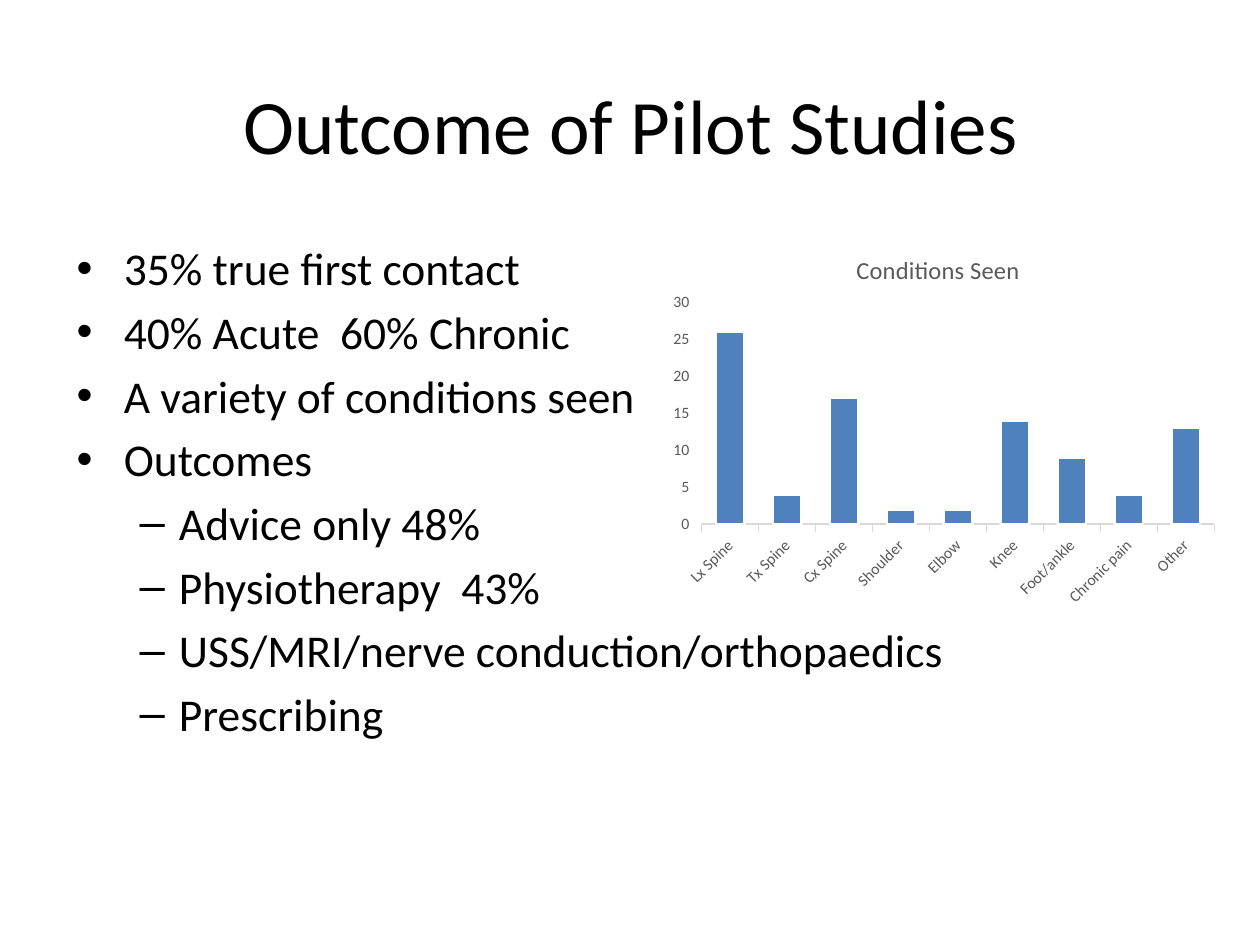
from lxml import etree
from pptx import Presentation
from pptx.chart.data import CategoryChartData
from pptx.dml.color import RGBColor
from pptx.enum.chart import XL_CHART_TYPE, XL_TICK_MARK
from pptx.enum.text import MSO_ANCHOR, MSO_AUTO_SIZE, PP_ALIGN
from pptx.oxml.ns import qn
from pptx.util import Emu, Pt

SCALE = 914400 / 126  # EMU in one px


def px(n):
    return Emu(round(n * SCALE))


def color(code):
    return RGBColor.from_string(code)


class Deck:
    face = "Calibri"
    ink, gray, rule, blue, white = "000000", "595959", "D9D9D9", "4F81BD", "FFFFFF"

    def __init__(self, wide, high):
        self.prs = Presentation()
        self.prs.slide_width, self.prs.slide_height = px(wide), px(high)
        # Title and content layout
        self.slide = self.prs.slides.add_slide(self.prs.slide_layouts[1])

    def style(self, font, size, code):
        font.name, font.size, font.bold = self.face, Pt(size), False
        font.color.rgb = color(code)

    def place(self, shape, box):
        shape.left, shape.top, shape.width, shape.height = map(px, box)
        shape.text_frame.word_wrap = True
        shape.text_frame.auto_size = MSO_AUTO_SIZE.NONE
        return shape.text_frame

    def title(self, text, box):
        frame = self.place(self.slide.shapes.title, box)
        frame.text = text
        frame.vertical_anchor = MSO_ANCHOR.MIDDLE
        frame.paragraphs[0].alignment = PP_ALIGN.CENTER
        self.style(frame.paragraphs[0].runs[0].font, 44, self.ink)

    def bullets(self, items, box):
        # Bullet signs and indents come from the template's levels
        frame = self.place(self.slide.placeholders[1], box)
        frame.text = "\n".join(text for level, text in items)
        for para, (level, text) in zip(frame.paragraphs, items):
            para.level = level
            self.style(para.runs[0].font, 26, self.ink)
        frame.paragraphs[0].space_before = Pt(0)

    def columns(self, name, values, box, plot):
        data = CategoryChartData()
        data.categories = list(values)
        data.add_series(name, list(values.values()))
        chart = self.slide.shapes.add_chart(
            XL_CHART_TYPE.COLUMN_CLUSTERED, *map(px, box), data).chart
        self.style(chart.font, 10, self.ink)
        chart.has_legend = False
        chart.has_title = True
        head = chart.chart_title
        head.include_in_layout = False
        head.text_frame.text = name
        self.style(head.text_frame.paragraphs[0].runs[0].font, 14, self.gray)

        # Bars
        bars = chart.plots[0]
        bars.gap_width, bars.vary_by_categories = 100, False
        form = bars.series[0].format
        form.fill.solid()
        form.fill.fore_color.rgb = color(self.blue)
        form.line.color.rgb, form.line.width = color(self.white), Pt(1.5)

        # Axes
        for axis in (chart.category_axis, chart.value_axis):
            axis.has_major_gridlines = False
            axis.major_tick_mark = XL_TICK_MARK.OUTSIDE
            axis.minor_tick_mark = XL_TICK_MARK.NONE
            self.style(axis.tick_labels.font, 9, self.gray)
        line = chart.category_axis.format.line
        line.color.rgb, line.width = color(self.rule), Pt(0.75)
        chart.value_axis.format.line.fill.background()
        chart.value_axis.minimum_scale = 0
        chart.value_axis.maximum_scale = 30
        chart.value_axis.major_unit = 5

        # Slanted category labels
        text = chart.category_axis._element.find(qn("c:txPr"))
        text.find(qn("a:bodyPr")).set("rot", "-2700000")
        self.layout(chart, plot)

    def layout(self, chart, plot):
        area = chart._chartSpace.chart.plotArea
        for old in area.findall(qn("c:layout")):
            area.remove(old)
        outer = etree.Element(qn("c:layout"))
        area.insert(0, outer)
        inner = etree.SubElement(outer, qn("c:manualLayout"))
        parts = [("layoutTarget", "inner"), ("xMode", "edge"), ("yMode", "edge")]
        for tag, value in parts + list(zip("xywh", plot)):
            etree.SubElement(inner, qn("c:" + tag)).set("val", str(value))


def main():
    deck = Deck(1260, 945)
    deck.title("Outcome of Pilot Studies", (64, 45, 1134, 158))
    deck.bullets([
        (0, "35% true first contact"),
        (0, "40% Acute  60% Chronic"),
        (0, "A variety of conditions seen"),
        (0, "Outcomes"),
        (1, "Advice only 48%"),
        (1, "Physiotherapy  43%"),
        (1, "USS/MRI/nerve conduction/orthopaedics"),
        (1, "Prescribing"),
    ], (64, 234, 1162, 624))
    deck.columns("Conditions Seen", {
        "Lx Spine": 26, "Tx Spine": 4, "Cx Spine": 17,
        "Shoulder": 2, "Elbow": 2, "Knee": 14,
        "Foot/ankle": 9, "Chronic pain": 4, "Other": 13,
    }, (650, 234, 576, 377), (0.09, 0.18, 0.89, 0.59))
    deck.prs.save("out.pptx")


if __name__ == "__main__":
    main()
